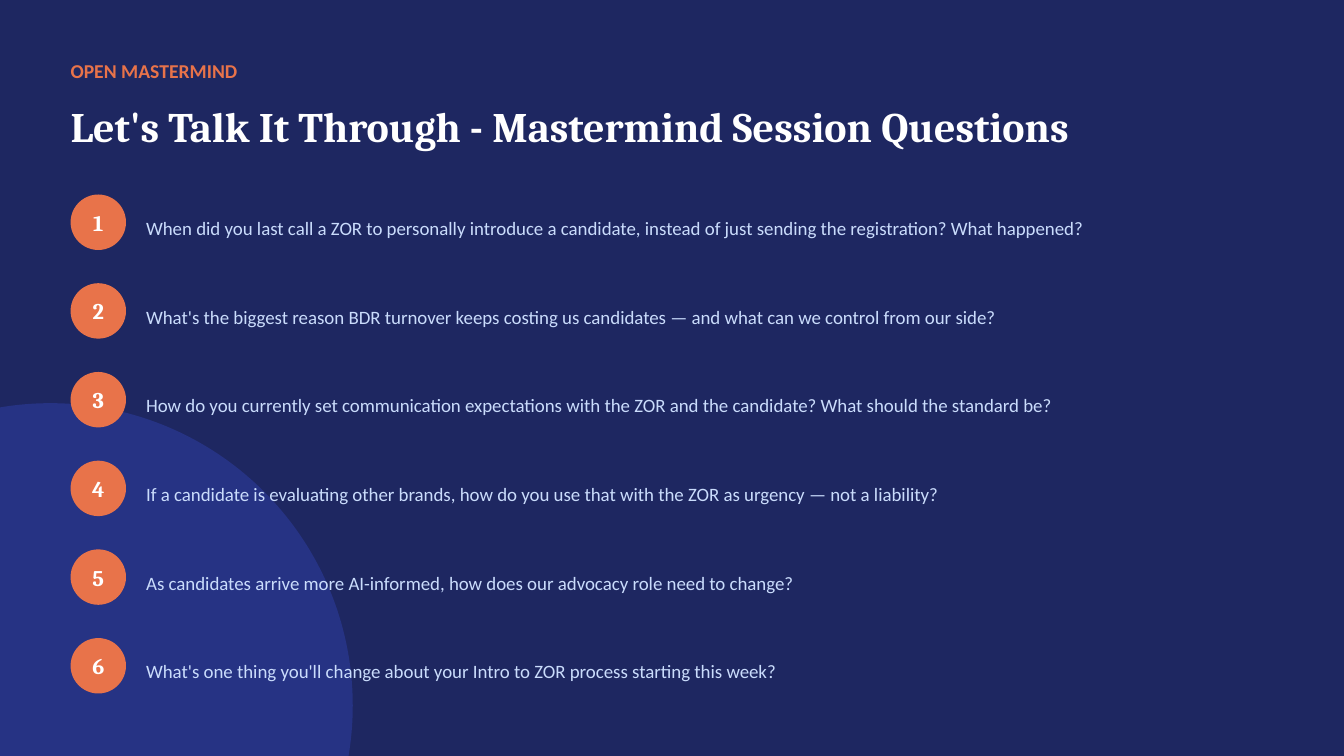
import dataclasses

import pptx
import pptx.dml.color
import pptx.enum.shapes
import pptx.enum.text
import pptx.shapes.autoshape
import pptx.slide
import pptx.util

Pt = pptx.util.Pt
RGBColor = pptx.dml.color.RGBColor
Align = pptx.enum.text.PP_ALIGN

NAVY = RGBColor(0x1E, 0x27, 0x61)
BLUE = RGBColor(0x26, 0x33, 0x84)
CORAL = RGBColor(0xE8, 0x73, 0x4A)
WHITE = RGBColor(0xFF, 0xFF, 0xFF)
ICE = RGBColor(0xCA, 0xDC, 0xFC)

LEFT = 50.4
TOP = 133.2
PITCH = 63.36
DISC = 39.6
DROP = 5.76  # disc top below row top

ASKS = [
    "When did you last call a ZOR to personally introduce a candidate, "
    "instead of just sending the registration? What happened?",
    "What's the biggest reason BDR turnover keeps costing us candidates "
    "— and what can we control from our side?",
    "How do you currently set communication expectations with the ZOR "
    "and the candidate? What should the standard be?",
    "If a candidate is evaluating other brands, how do you use that "
    "with the ZOR as urgency — not a liability?",
    "As candidates arrive more AI-informed, how does our advocacy role need to change?",
    "What's one thing you'll change about your Intro to ZOR process starting this week?",
]


@dataclasses.dataclass(frozen=True)
class Box:
    left: float
    top: float
    width: float
    height: float

    def place(self) -> list[pptx.util.Length]:
        return [Pt(n) for n in (self.left, self.top, self.width, self.height)]


@dataclasses.dataclass(frozen=True)
class Style:
    font: str
    size: float
    color: RGBColor
    bold: bool = False
    align: Align = Align.LEFT


LABEL = Style("Calibri", 14, CORAL, bold=True)
TITLE = Style("Cambria", 30, WHITE, bold=True)
NUMBER = Style("Cambria", 16, WHITE, bold=True, align=Align.CENTER)
ASK = Style("Calibri", 13.5, ICE)


def write(shape: pptx.shapes.autoshape.Shape, text: str, style: Style) -> None:
    frame = shape.text_frame
    frame.word_wrap = True
    frame.vertical_anchor = pptx.enum.text.MSO_ANCHOR.MIDDLE
    frame.margin_left = frame.margin_right = Pt(0)
    frame.margin_top = frame.margin_bottom = Pt(0)
    para = frame.paragraphs[0]
    para.alignment = style.align
    run = para.add_run()
    run.text = text
    run.font.name = style.font
    run.font.size = Pt(style.size)
    run.font.bold = style.bold
    run.font.color.rgb = style.color


def add_text(slide: pptx.slide.Slide, box: Box, text: str, style: Style) -> None:
    write(slide.shapes.add_textbox(*box.place()), text, style)


def add_disc(
    slide: pptx.slide.Slide, box: Box, color: RGBColor
) -> pptx.shapes.autoshape.Shape:
    disc = slide.shapes.add_shape(pptx.enum.shapes.MSO_SHAPE.OVAL, *box.place())
    disc.shadow.inherit = False
    disc.fill.solid()
    disc.fill.fore_color.rgb = color
    disc.line.fill.background()
    return disc


def main() -> None:
    deck = pptx.Presentation()
    deck.slide_width, deck.slide_height = Pt(960), Pt(540)
    slide = deck.slides.add_slide(deck.slide_layouts[6])
    slide.background.fill.solid()
    slide.background.fill.fore_color.rgb = NAVY

    add_disc(slide, Box(-180, 288, 432, 432), BLUE)
    add_text(slide, Box(LEFT, 36, 576, 28.8), "OPEN MASTERMIND", LABEL)
    add_text(
        slide,
        Box(LEFT, 64.8, 792, 50.4),
        "Let's Talk It Through - Mastermind Session Questions",
        TITLE,
    )
    for row, ask in enumerate(ASKS):
        top = TOP + row * PITCH
        disc = add_disc(slide, Box(LEFT, top + DROP, DISC, DISC), CORAL)
        write(disc, str(row + 1), NUMBER)
        add_text(slide, Box(104.4, top, 802.8, 59.04), ask, ASK)

    deck.save("out.pptx")


if __name__ == "__main__":
    main()
